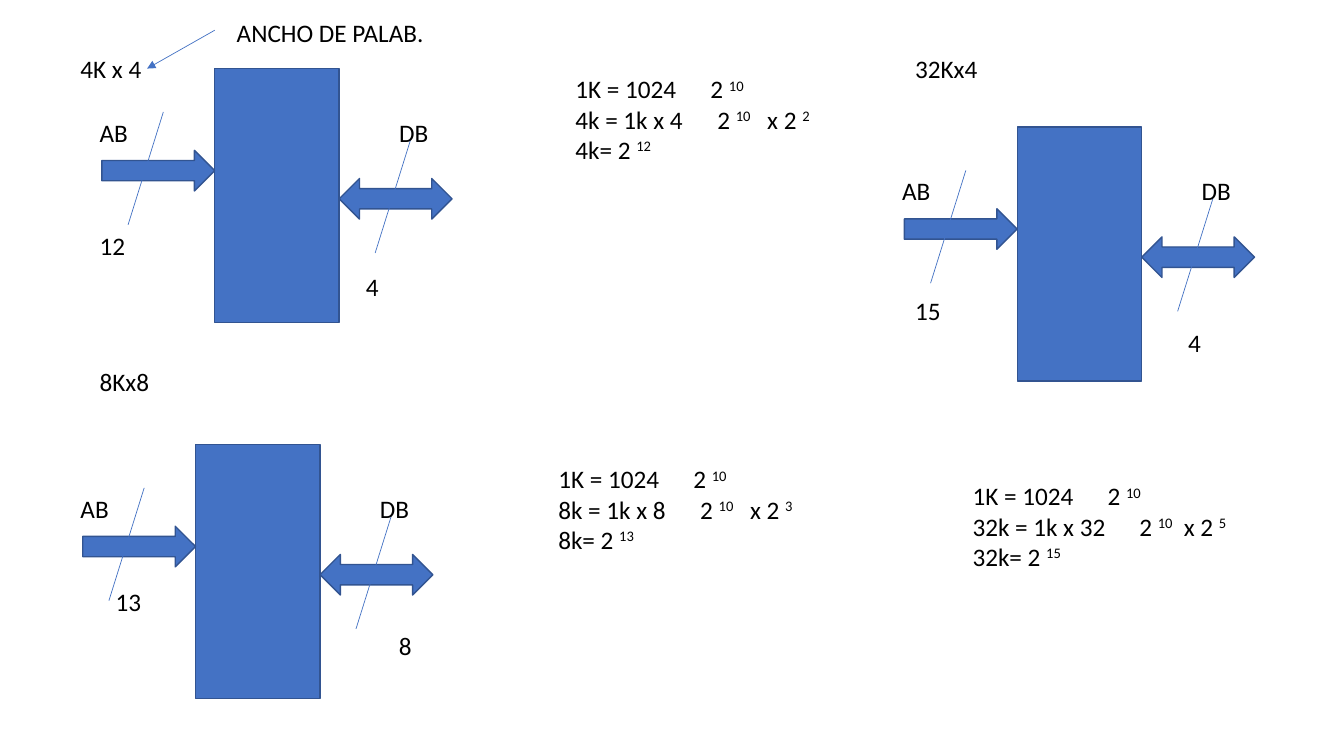
"""Build a slide that works out address and data bus widths for three memories."""
from lxml import etree
from pptx import Presentation
from pptx.dml.color import RGBColor
from pptx.enum.shapes import MSO_CONNECTOR, MSO_SHAPE
from pptx.enum.text import MSO_AUTO_SIZE
from pptx.oxml.ns import qn
from pptx.util import Pt

STRAIGHT = MSO_CONNECTOR.STRAIGHT
CHIP, ADDRESS_BUS, DATA_BUS = MSO_SHAPE.RECTANGLE, MSO_SHAPE.RIGHT_ARROW, MSO_SHAPE.LEFT_RIGHT_ARROW
FIT_TEXT = MSO_AUTO_SIZE.SHAPE_TO_FIT_TEXT
BLUE = RGBColor(0x44, 0x72, 0xC4)
DARK_BLUE = RGBColor(0x32, 0x54, 0x91)
BLACK = RGBColor(0, 0, 0)
FONT_FORMAT = {"name": "Calibri", "size": Pt(18)}


def add_text(shapes, rows, left, top, width, height=29):
    """Write rows of (tab stops, parts), where every second part is an exponent."""
    frame = shapes.add_textbox(Pt(left), Pt(top), Pt(width), Pt(height)).text_frame
    frame.word_wrap = True
    frame.auto_size = FIT_TEXT
    for number, (stops, parts) in enumerate(rows):
        paragraph = frame.add_paragraph() if number else frame.paragraphs[0]
        if stops:
            tab_list = etree.SubElement(paragraph._p.get_or_add_pPr(), qn("a:tabLst"))
            for stop in stops:
                etree.SubElement(tab_list, qn("a:tab"), pos=str(Pt(stop)), algn="l")
        for index, part in enumerate(parts):
            run = paragraph.add_run()
            run.text = part
            run.font.color.rgb = BLACK
            for key, value in FONT_FORMAT.items():
                setattr(run.font, key, value)
            if index % 2:
                run._r.get_or_add_rPr().set("baseline", "30000")


def add_line(shapes, *ends):
    """Draw a thin blue line without shadow."""
    line = shapes.add_connector(STRAIGHT, *[Pt(end) for end in ends])
    line.line.color.rgb = BLUE
    line.line.width = Pt(0.5)
    etree.SubElement(line._element.spPr, qn("a:effectLst"))
    return line


presentation = Presentation()
presentation.slide_width, presentation.slide_height = Pt(960), Pt(540)
slide = presentation.slides.add_slide(presentation.slide_layouts[6])

memory_origins = [(153.4, 49), (139.7, 317.5), (726.6, 90.7)]
memory_parts = [
    (CHIP, 0, 0, 88.9, 181.5),
    (ADDRESS_BUS, -80.6, 58.4, 80.6, 29),
    (DATA_BUS, 88.9, 78.5, 80.6, 29),
]
bus_slashes = [(139.8, 51.1), (-36.7, 31)]
bus_names = [("AB", -89.3, 41), ("DB", 124.6, 58)]

for x, y in memory_origins:
    memory = slide.shapes.add_group_shape().shapes
    for kind, left, top, width, height in memory_parts:
        part = memory.add_shape(kind, Pt(x + left), Pt(y + top), Pt(width), Pt(height))
        part.shadow.inherit = False
        part.fill.solid()
        part.fill.fore_color.rgb = BLUE
        part.line.color.rgb = DARK_BLUE
        part.line.width = Pt(1)
    for left, top in bus_slashes:
        add_line(memory, x + left, y + top, x + left - 25.2, y + top + 80.6)
    for name, left, width in bus_names:
        add_text(memory, [((), [name])], x + left, y + 31, width)

word_width_arrow = add_line(slide.shapes, 153.4, 21.6, 105.1, 49)
etree.SubElement(word_width_arrow.line._get_or_add_ln(), qn("a:tailEnd"), type="triangle")

labels = [
    ("4K x 4", 50.4, 34.6, 103),
    ("8Kx8", 64.1, 257.8, 75),
    ("32Kx4", 646.6, 34.6, 81),
    ("ANCHO DE PALAB.", 162, 8.6, 157),
    ("12", 64.1, 160.6, 46),
    ("4", 254.2, 190.1, 51),
    ("13", 75.6, 415.4, 56),
    ("8", 277.9, 446.4, 45),
    ("15", 646.6, 207.4, 41),
    ("4", 841.7, 230.4, 39),
]
for text, left, top, width in labels:
    add_text(slide.shapes, [((), [text])], left, top, width)

calculations = [
    ("4", "2", "12", (101.4, 137), 403.9, 49, 314),
    ("8", "3", "13", (101.4, 137), 391.7, 327.6, 192),
    ("32", "5", "15", (119.2, 151), 687.6, 339.8, 208),
]
for size, factor_exponent, total_exponent, stops, left, top, width in calculations:
    rows = [
        ((96.5,), ["1K = 1024\t2 ", "10"]),
        (stops, [f"{size}k = 1k x {size}\t2 ", "10", "\tx 2 ", factor_exponent]),
        ((), [f"{size}k= 2 ", total_exponent]),
    ]
    add_text(slide.shapes, rows, left, top, width, 72.7)

presentation.save("out.pptx")
